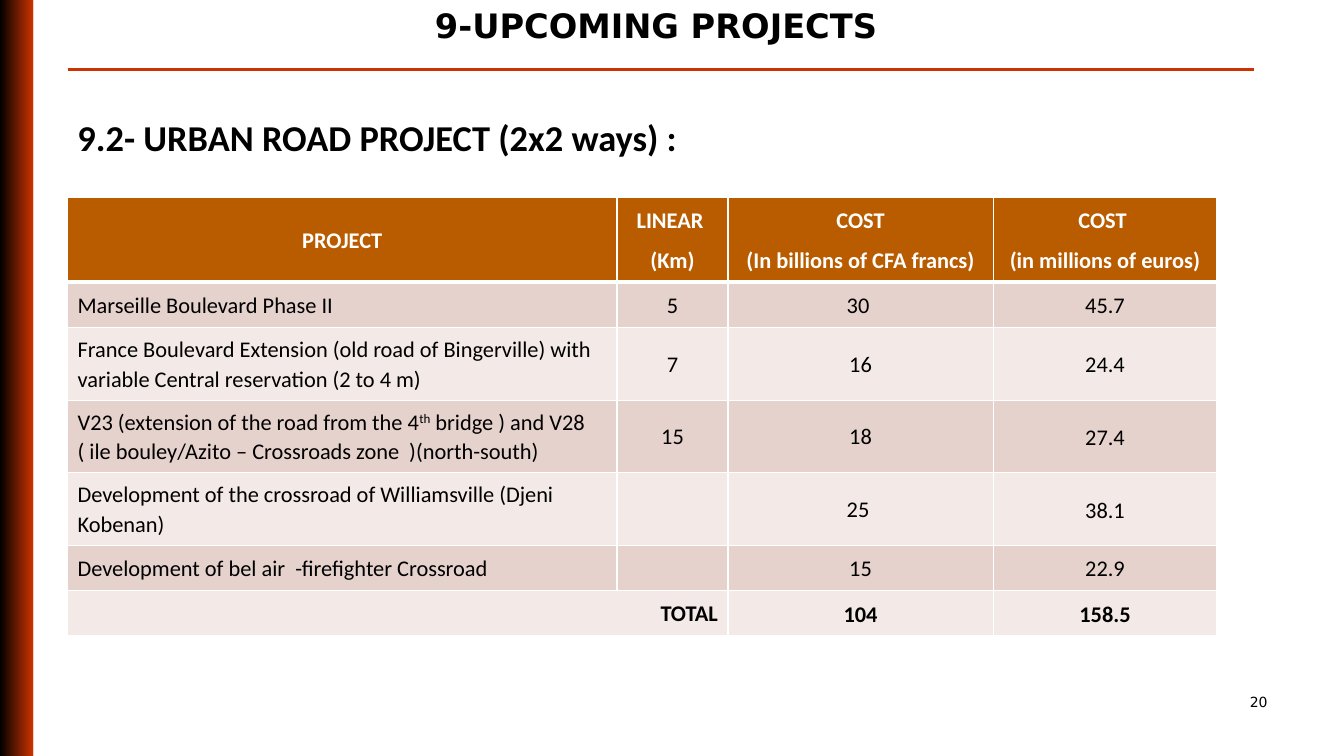
from dataclasses import dataclass

import pptx
import pptx.dml.color
import pptx.enum.shapes
import pptx.enum.text
import pptx.oxml
import pptx.oxml.ns
import pptx.util

Inches = pptx.util.Inches
Pt = pptx.util.Pt
Align = pptx.enum.text.PP_ALIGN

COLORS = {
    "black": "000000",
    "white": "FFFFFF",
    "red": "CC3300",
    "header": "B95C00",
    "band_dark": "E6D2CC",
    "band_light": "F3EAE7",
}


@dataclass
class Label:
    text: str
    left: float
    top: float
    width: float
    height: float
    size: int
    font: str
    bold: bool
    align: Align


@dataclass
class Project:
    name: str
    linear: str
    cfa: str
    euros: str
    height: float


LABELS = [
    Label("9.2- URBAN ROAD PROJECT (2x2 ways) :", 0.67, 1.09, 12, 0.6, 26, "Calibri", True, Align.LEFT),
    Label("20", 9.56, 6.83, 3.11, 0.5, 10, "DejaVu Sans", False, Align.RIGHT),
    Label("9-UPCOMING PROJECTS ", 0.75, 0, 11.63, 0.98, 24, "DejaVu Sans", True, Align.CENTER),
]

HEADERS = ["PROJECT", "LINEAR \n(Km)", "COST\n(In billions of CFA francs)", "COST \n(in millions of euros)"]
HEADER_HEIGHT = 0.84
COLUMN_WIDTHS = [5.45, 1.1, 2.63, 2.22]
PROJECTS = [
    Project("Marseille Boulevard Phase II", "5", "30 ", "45.7", 0.45),
    Project("France Boulevard Extension (old road of Bingerville) with variable Central reservation (2 to 4 m)",
            "7", "16", "24.4", 0.72),
    Project("V23 (extension of the road from the 4^th^ bridge ) and V28  "
            "( ile bouley/Azito – Crossroads zone  )(north-south)", "15", "18", "27.4", 0.72),
    Project("Development of the crossroad of Williamsville (Djeni Kobenan)", "", "25 ", "38.1", 0.72),
    Project("Development of bel air  -firefighter Crossroad", "", "15", "22.9", 0.45),
    Project("TOTAL", "", "104", "158.5", 0.45),
]


def rgb(name: str) -> pptx.dml.color.RGBColor:
    return pptx.dml.color.RGBColor.from_string(COLORS[name])


def style_run(r, size: int, font: str, color: str, bold: bool) -> None:
    r.font.size = Pt(size)
    r.font.name = font
    r.font.bold = bold
    r.font.color.rgb = rgb(color)


def add_side_bar(s, top: float, height: float) -> None:
    sp = s.shapes.add_shape(pptx.enum.shapes.MSO_SHAPE.RECTANGLE, 0, Inches(top), Inches(0.33), Inches(height))
    sp.shadow.inherit = False
    sp.line.fill.background()
    sp.fill.gradient()
    sp.fill.gradient_angle = 0
    for stop, position, color in zip(sp.fill.gradient_stops, (0, 1), ("black", "red")):
        stop.position = position
        stop.color.rgb = rgb(color)


def add_title_rule(s) -> None:
    line = s.shapes.add_connector(pptx.enum.shapes.MSO_CONNECTOR.STRAIGHT,
                                  Inches(0.67), Inches(0.69), Inches(12.44), Inches(0.69))
    line.line.color.rgb = rgb("red")
    line.line.width = Pt(2.25)
    pptx.oxml.ns.qn("a:effectLst")
    line._element.spPr.append(pptx.oxml.parse_xml(f'<a:effectLst {pptx.oxml.ns.nsdecls("a")}/>'))


def add_label(s, label: Label) -> None:
    box = s.shapes.add_textbox(Inches(label.left), Inches(label.top), Inches(label.width), Inches(label.height))
    tf = box.text_frame
    tf.word_wrap = True
    tf.text = label.text
    p = tf.paragraphs[0]
    p.alignment = label.align
    style_run(p.runs[0], label.size, label.font, "black", label.bold)


def set_borders(cell, bottom: float) -> None:
    tc_pr = cell._tc.get_or_add_tcPr()
    widths = {"lnL": 1, "lnR": 1, "lnT": 1, "lnB": bottom}
    for i, (side, width) in enumerate(widths.items()):
        tc_pr.insert(i, pptx.oxml.parse_xml(
            f'<a:{side} {pptx.oxml.ns.nsdecls("a")} w="{Pt(width)}"><a:solidFill>'
            f'<a:srgbClr val="{COLORS["white"]}"/></a:solidFill></a:{side}>'))


def fill_cell(cell, text: str, fill: str, color: str, bold: bool, align: Align, bottom: float) -> None:
    cell.fill.solid()
    cell.fill.fore_color.rgb = rgb(fill)
    set_borders(cell, bottom)
    cell.vertical_anchor = pptx.enum.text.MSO_ANCHOR.MIDDLE
    tf = cell.text_frame
    tf.text = text
    for p in tf.paragraphs:
        p.alignment = align
        p.line_spacing = 1.07
        p.space_after = Pt(8)
        parts = p.text.split("^")
        p.text = parts[0]
        for part in parts[1:]:
            p.add_run().text = part
        for i, r in enumerate(p.runs):
            style_run(r, 16, "Calibri", color, bold)
            if i % 2:
                r._r.get_or_add_rPr().set("baseline", "30000")


def add_project_table(s) -> None:
    heights = [HEADER_HEIGHT] + [project.height for project in PROJECTS]
    table = s.shapes.add_table(len(heights), len(COLUMN_WIDTHS), Inches(0.67), Inches(1.96),
                               Inches(sum(COLUMN_WIDTHS)), Inches(sum(heights))).table
    for column, width in zip(table.columns, COLUMN_WIDTHS):
        column.width = Inches(width)
    for row, height in zip(table.rows, heights):
        row.height = Inches(height)
    for col, text in enumerate(HEADERS):
        fill_cell(table.cell(0, col), text, "header", "white", True, Align.CENTER, 3)
    for row, project in enumerate(PROJECTS, start=1):
        is_total = row == len(PROJECTS)
        band = "band_dark" if row % 2 else "band_light"
        name_align = Align.RIGHT if is_total else Align.LEFT
        values = [project.name, project.linear, project.cfa, project.euros]
        for col, text in enumerate(values):
            cell = table.cell(row, col)
            fill_cell(cell, text, band, "black", is_total, Align.CENTER if col else name_align, 1)
            if col == 3 or (is_total and col == 2):
                cell.margin_left = cell.margin_right = cell.margin_top = Inches(0.01)
                cell.margin_bottom = 0
    table.cell(len(PROJECTS), 0).merge(table.cell(len(PROJECTS), 1))


def main() -> None:
    prs = pptx.Presentation()
    prs.slide_width = Inches(13.33)
    prs.slide_height = Inches(7.5)
    s = prs.slides.add_slide(prs.slide_layouts[6])
    for i in range(3):
        add_side_bar(s, i * 2.5, 2.5)
    add_title_rule(s)
    add_project_table(s)
    for label in LABELS:
        add_label(s, label)
    prs.save("out.pptx")


if __name__ == "__main__":
    main()
